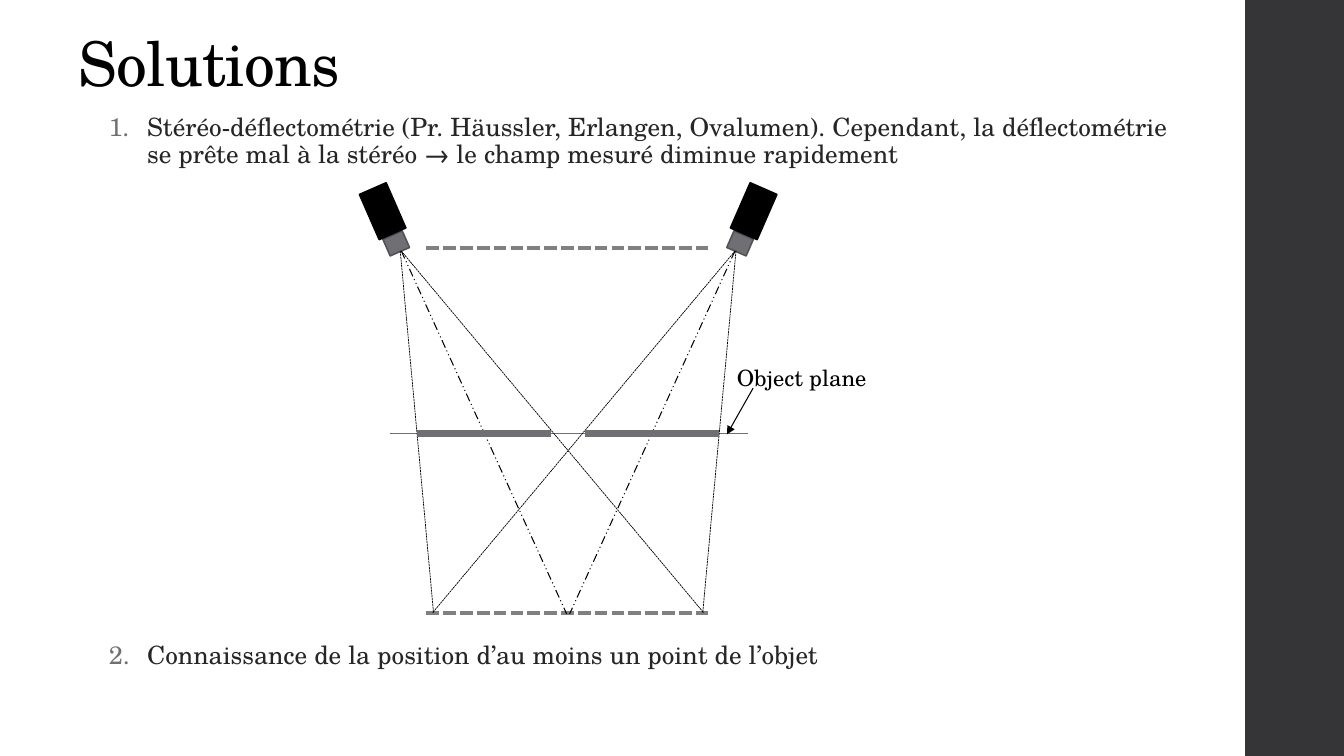
from dataclasses import dataclass
from typing import Optional

from lxml import etree
from pptx import Presentation
from pptx import util as u
from pptx.dml.color import RGBColor
from pptx.enum import dml, shapes, text
from pptx.oxml import ns

FONT = "TeX Gyre Schola"
BLACK = RGBColor(0x00, 0x00, 0x00)
INK = RGBColor(0x26, 0x26, 0x26)
SIDEBAR = RGBColor(0x35, 0x35, 0x37)
GRAY = RGBColor(0x6F, 0x6F, 0x74)
LENS_EDGE = RGBColor(0x52, 0x52, 0x56)
SCREEN_GRAY = RGBColor(0x80, 0x80, 0x80)

DOTTED = dml.MSO_LINE.SQUARE_DOT
AXIS_DASH = dml.MSO_LINE.DASH_DOT_DOT
MIRROR_SUM = 11.27  # x of a left point plus x of its right twin


@dataclass(frozen=True)
class Stroke:
    start: tuple[float, float]
    end: tuple[float, float]
    color: RGBColor
    width: float
    dash: Optional[dml.MSO_LINE] = None
    arrow: bool = False

    def mirrored(self) -> "Stroke":
        (x1, y1), (x2, y2) = self.start, self.end
        return Stroke((MIRROR_SUM - x1, y1), (MIRROR_SUM - x2, y2),
                      self.color, self.width, self.dash, self.arrow)


@dataclass(frozen=True)
class Block:
    left: float
    top: float
    width: float
    height: float
    fill: RGBColor
    edge: Optional[RGBColor] = None
    angle: float = 0

    def mirrored(self) -> "Block":
        return Block(MIRROR_SUM - self.left - self.width, self.top, self.width,
                     self.height, self.fill, self.edge, 360 - self.angle)


@dataclass(frozen=True)
class Solution:
    wording: str
    space_before: float


SHARED_LINES = [
    Stroke((4.23, 2.46), (7.02, 2.46), SCREEN_GRAY, 3, DOTTED),
    Stroke((3.87, 4.3), (7.42, 4.3), GRAY, 0.75),
    Stroke((4.23, 6.08), (7.02, 6.08), SCREEN_GRAY, 3, DOTTED),
    Stroke((7.47, 3.85), (7.21, 4.31), BLACK, 0.75, arrow=True),
]
LEFT_CAMERA = [
    Block(3.84, 2.31, 0.18, 0.21, GRAY, LENS_EDGE, 66.4),
    Block(3.55, 1.95, 0.49, 0.29, BLACK, BLACK, 66.4),
]
LEFT_RAYS = [
    Stroke((3.98, 2.49), (5.62, 6.09), BLACK, 0.75, AXIS_DASH),
    Stroke((3.98, 2.49), (6.98, 6.08), BLACK, 0.5, DOTTED),
    Stroke((3.97, 2.49), (4.3, 6.08), BLACK, 0.5, DOTTED),
    Stroke((5.47, 4.3), (4.14, 4.3), GRAY, 4.5),
]
SOLUTIONS = [
    Solution("Stéréo-déflectométrie (Pr. Häussler, Erlangen, Ovalumen). "
             "Cependant, la déflectométrie se prête mal à la stéréo → "
             "le champ mesuré diminue rapidement", 0),
    Solution("Connaissance de la position d’au moins un point de l’objet", 335),
]


def draw_stroke(canvas, stroke: Stroke) -> None:
    points = [u.Inches(value) for value in stroke.start + stroke.end]
    line = canvas.add_connector(shapes.MSO_CONNECTOR.STRAIGHT, *points)
    line.line.color.rgb = stroke.color
    line.line.width = u.Pt(stroke.width)
    if stroke.dash is not None:
        line.line.dash_style = stroke.dash
    properties = line._element.spPr
    if stroke.arrow:
        outline = properties.find(ns.qn("a:ln"))
        etree.SubElement(outline, ns.qn("a:tailEnd"), type="triangle")
    etree.SubElement(properties, ns.qn("a:effectLst"))


def draw_block(canvas, block: Block) -> None:
    shape = canvas.add_shape(
        shapes.MSO_SHAPE.RECTANGLE, u.Inches(block.left), u.Inches(block.top),
        u.Inches(block.width), u.Inches(block.height))
    shape.shadow.inherit = False
    shape.rotation = block.angle
    shape.fill.solid()
    shape.fill.fore_color.rgb = block.fill
    if block.edge is None:
        shape.line.fill.background()
    else:
        shape.line.color.rgb = block.edge
        shape.line.width = u.Pt(1.1)


def place(box, left: float, top: float, width: float, height: float) -> None:
    box.left, box.top = u.Inches(left), u.Inches(top)
    box.width, box.height = u.Inches(width), u.Inches(height)
    frame = box.text_frame
    frame.word_wrap = True
    frame.auto_size = text.MSO_AUTO_SIZE.NONE
    frame.vertical_anchor = text.MSO_ANCHOR.TOP


def add_span(para, wording: str, size: float, color: RGBColor):
    para.alignment = text.PP_ALIGN.LEFT
    span = para.add_run()
    span.text = wording
    span.font.name = FONT
    span.font.size = u.Pt(size)
    span.font.color.rgb = color
    return span


def number_para(para) -> None:
    properties = para._p.get_or_add_pPr()
    properties.set("marL", str(u.Inches(0.68)))
    properties.set("indent", str(u.Inches(-0.38)))
    bullet_color = etree.SubElement(properties, ns.qn("a:buClr"))
    etree.SubElement(bullet_color, ns.qn("a:srgbClr"), val=str(GRAY))
    etree.SubElement(properties, ns.qn("a:buFont"), typeface=FONT)
    etree.SubElement(properties, ns.qn("a:buAutoNum"), type="arabicPeriod")


def write_title(box) -> None:
    place(box, 0.68, 0.28, 9.33, 0.9)
    para = box.text_frame.paragraphs[0]
    para.line_spacing = 0.9
    span = add_span(para, "Solutions", 44, BLACK)
    span.font._element.set("spc", "-50")


def write_solutions(box) -> None:
    place(box, 0.68, 1.09, 11.25, 5.66)
    frame = box.text_frame
    for index, solution in enumerate(SOLUTIONS):
        para = frame.add_paragraph() if index else frame.paragraphs[0]
        para.level = 1
        number_para(para)
        para.line_spacing = 0.9
        para.space_before = u.Pt(solution.space_before)
        para.space_after = u.Pt(3)
        add_span(para, solution.wording, 18, INK)


def draw_setup(page) -> None:
    """Draw the two cameras, their fields of view and the object plane."""
    canvas = page.shapes.add_group_shape().shapes
    for stroke in SHARED_LINES:
        draw_stroke(canvas, stroke)
    for block in LEFT_CAMERA:
        draw_block(canvas, block.mirrored())
        draw_block(canvas, block)
    for ray in LEFT_RAYS:
        draw_stroke(canvas, ray.mirrored())
        draw_stroke(canvas, ray)
    label = canvas.add_textbox(0, 0, 0, 0)
    place(label, 7.21, 3.54, 1.75, 0.54)
    para = label.text_frame.paragraphs[0]
    para.line_spacing = 1.07
    add_span(para, "Object plane", 16, BLACK)


def main() -> None:
    deck = Presentation()
    deck.slide_width, deck.slide_height = u.Inches(13.33), u.Inches(7.5)
    page = deck.slides.add_slide(deck.slide_layouts[1])
    draw_block(page.shapes, Block(12.35, 0, 0.98, 7.5, SIDEBAR))
    write_title(page.shapes.title)
    write_solutions(page.placeholders[1])
    draw_setup(page)
    deck.save("out.pptx")


if __name__ == "__main__":
    main()
